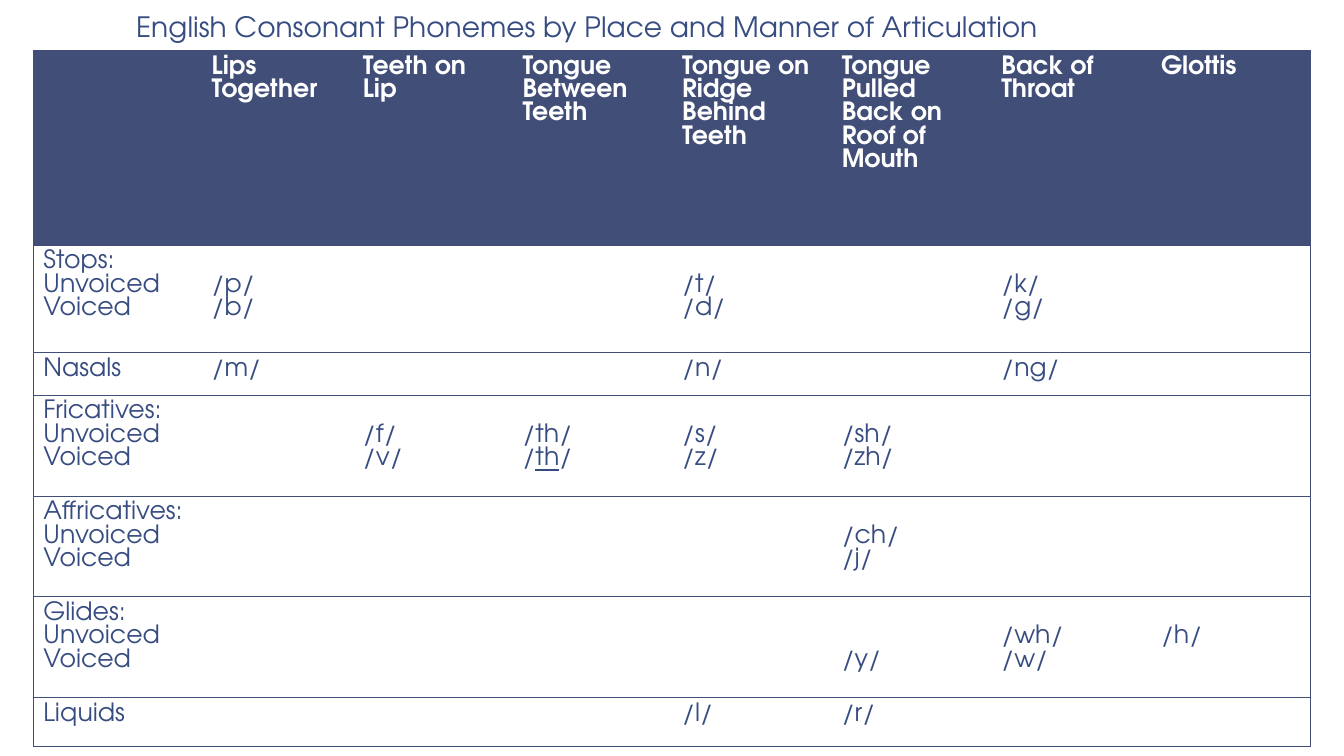
import dataclasses

import lxml.etree
import pptx
import pptx.dml.color
import pptx.enum.text
import pptx.oxml.ns
import pptx.util

Inches = pptx.util.Inches
Pt = pptx.util.Pt


@dataclasses.dataclass
class Theme:
    font: str = "TeX Gyre Adventor"
    ink: str = "374C81"
    band: str = "414E77"
    white: str = "FFFFFF"
    title: float = 20
    body: float = 18
    rule: float = 0.5
    pad: float = 0.05
    line: float = 0.233  # inches taken by one line of body text


HEADS = ["", "Lips Together", "Teeth on Lip", "Tongue Between Teeth",
         "Tongue on Ridge Behind Teeth", "Tongue Pulled Back on Roof of Mouth",
         "Back of Throat", "Glottis"]

# Row label lines, row height, then {column: (lines skipped, sounds)}.
VOICE = ["Unvoiced", "Voiced"]
ROWS = [
    (["Stops:", *VOICE], 1.07,
     {1: (1, ["/p/", "/b/"]), 4: (1, ["/t/", "/d/"]), 6: (1, ["/k/", "/g/"])}),
    (["Nasals"], 0.42,
     {1: (0, ["/m/"]), 4: (0, ["/n/"]), 6: (0, ["/ng/"])}),
    (["Fricatives:", *VOICE], 1,
     {2: (1, ["/f/", "/v/"]), 3: (1, ["/th/", "/_th_/"]),
      4: (1, ["/s/", "/z/"]), 5: (1, ["/sh/", "/zh/"])}),
    (["Affricatives:", *VOICE], 1, {5: (1, ["/ch/", "/j/"])}),
    (["Glides:", *VOICE], 1,
     {5: (2, ["/y/"]), 6: (1, ["/wh/", "/w/"]), 7: (1, ["/h/"])}),
    (["Liquids"], 0.48, {4: (0, ["/l/"]), 5: (0, ["/r/"])}),
]
HEAD_TALL = 1.93
WIDE, FIRST, SECOND = 12.67, 1.67, 1.5


def write(frame, lines, theme, size, color, bold=False, space=None):
    """Fill a text frame, one paragraph a line; _marks_ enclose underlined text."""
    for i, line in enumerate(lines):
        para = frame.paragraphs[0] if i == 0 else frame.add_paragraph()
        if space:
            para.line_spacing = space
        for j, part in enumerate(line.split("_")):
            run = para.add_run()
            run.text = part
            font = run.font
            font.name, font.size, font.bold = theme.font, Pt(size), bold
            font.color.rgb = pptx.dml.color.RGBColor.from_string(color)
            if j % 2:
                font.underline = True


class Page:
    def __init__(self, slide, theme):
        self.slide, self.theme = slide, theme

    def title(self, text, left, top, width, height):
        box = self.slide.shapes.add_textbox(
            Inches(left), Inches(top), Inches(width), Inches(height))
        frame = box.text_frame
        frame.word_wrap = True
        frame.vertical_anchor = pptx.enum.text.MSO_ANCHOR.BOTTOM
        frame.margin_left = frame.margin_right = Inches(0.13)
        frame.margin_top = frame.margin_bottom = Inches(0.07)
        write(frame, [text], self.theme, self.theme.title, self.theme.ink, space=0.85)

    def edge(self, cell, shown):
        """Rule the sides named in shown and clear the others."""
        props = cell._tc.get_or_add_tcPr()
        qn = pptx.oxml.ns.qn
        for side in "LRTB":
            line = lxml.etree.SubElement(
                props, qn("a:ln" + side), w=str(Pt(self.theme.rule)))
            if side in shown:
                fill = lxml.etree.SubElement(line, qn("a:solidFill"))
                lxml.etree.SubElement(fill, qn("a:srgbClr"), val=self.theme.band)
            else:
                lxml.etree.SubElement(line, qn("a:noFill"))

    def cell(self, cell, lines, shown, skip=0, head=False):
        theme = self.theme
        self.edge(cell, shown)
        if head:
            cell.fill.solid()
            cell.fill.fore_color.rgb = pptx.dml.color.RGBColor.from_string(theme.band)
        else:
            cell.fill.background()
        cell.margin_top = Inches(theme.pad + skip * theme.line)
        if any(lines):
            write(cell.text_frame, lines, theme, theme.body,
                  theme.white if head else theme.ink, bold=head)

    def chart(self, left, top):
        """Lay out the grid of sounds."""
        talls = [HEAD_TALL] + [tall for _, tall, _ in ROWS]
        count = len(HEADS)
        rest = (WIDE - FIRST - SECOND) / (count - 2)
        table = self.slide.shapes.add_table(
            len(talls), count, Inches(left), Inches(top),
            Inches(WIDE), Inches(sum(talls))).table
        table.horz_banding = False
        for col, width in zip(table.columns, [FIRST, SECOND] + [rest] * (count - 2)):
            col.width = Inches(width)
        for row, tall in zip(table.rows, talls):
            row.height = Inches(tall)
        for c, head in enumerate(HEADS):
            shown = "TB" + ("L" if c == 0 else "") + ("R" if c == count - 1 else "")
            self.cell(table.cell(0, c), [head], shown, head=True)
            for r, (label, _, sounds) in enumerate(ROWS, 1):
                skip, lines = (0, label) if c == 0 else sounds.get(c, (0, []))
                self.cell(table.cell(r, c), lines, shown, skip)


def main():
    deck = pptx.Presentation()
    deck.slide_width, deck.slide_height = Inches(13.33), Inches(7.5)
    page = Page(deck.slides.add_slide(deck.slide_layouts[6]), Theme())
    page.title("English Consonant Phonemes by Place and Manner of Articulation",
               1.22, 0.08, 11.11, 0.42)
    page.chart(0.33, 0.5)
    deck.save("out.pptx")


if __name__ == "__main__":
    main()
